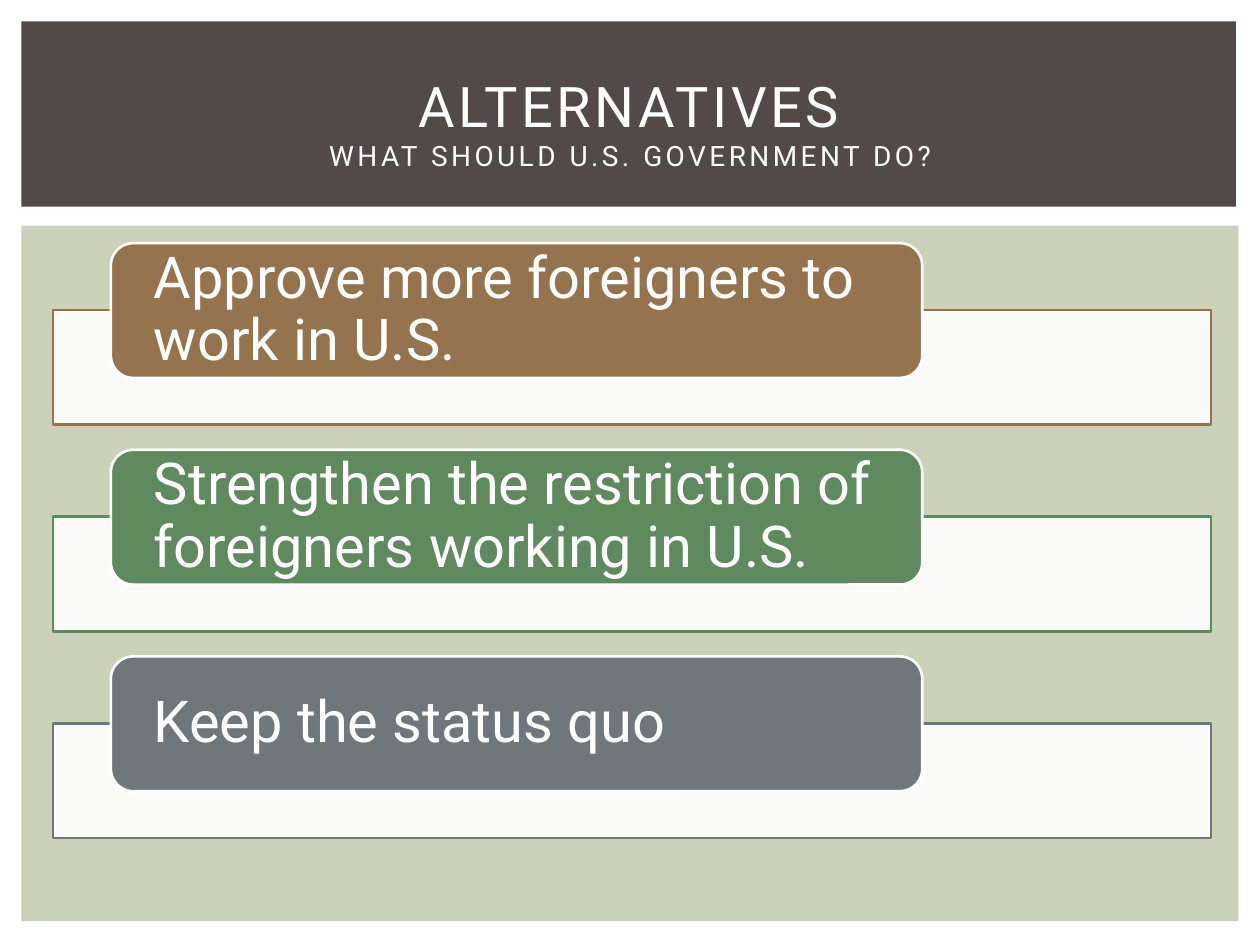
from dataclasses import dataclass

from lxml import etree
from pptx import Presentation
from pptx import util as u
from pptx.dml.color import RGBColor
from pptx.enum import shapes, text
from pptx.oxml.ns import qn


@dataclass(frozen=True)
class Theme:
    font: str = "Roboto"
    white: str = "FFFFFF"
    header: str = "534949"
    panel: str = "CCD1B9"
    accents: tuple = ("94734E", "5F895E", "6F777D")
    title_size: int = 32
    subtitle_size: int = 16
    option_size: int = 33
    title_spacing: int = 2
    line_width: float = 1.5


class SlideBuilder:
    def __init__(self, slide, theme):
        self.slide = slide
        self.theme = theme

    def add_box(self, kind, bounds, fill, line=None, opacity=100):
        """Draw a filled preset shape, outlined if a line colour is given."""
        box = self.slide.shapes.add_shape(kind, *map(u.Inches, bounds))
        box.shadow.inherit = False
        box.fill.solid()
        box.fill.fore_color.rgb = RGBColor.from_string(fill)
        if opacity < 100:
            color = box.element.spPr.find(qn("a:solidFill"))[0]
            etree.SubElement(color, qn("a:alpha"), val=str(opacity * 1000))
        if line:
            box.line.color.rgb = RGBColor.from_string(line)
            box.line.width = u.Pt(self.theme.line_width)
        else:
            box.line.fill.background()
        return box

    def add_span(self, para, words, size, spacing=0):
        span = para.add_run()
        span.text = words
        span.font.name = self.theme.font
        span.font.size = u.Pt(size)
        span.font.color.rgb = RGBColor.from_string(self.theme.white)
        if spacing:
            span.font._element.set("spc", str(spacing * 100))

    def add_title(self, heading, question):
        title = self.slide.shapes.title
        title.left, title.top = u.Inches(0.42), u.Inches(0.39)
        title.width, title.height = u.Inches(9.17), u.Inches(1.15)
        frame = title.text_frame
        frame.word_wrap = True
        frame.auto_size = text.MSO_AUTO_SIZE.NONE
        frame.vertical_anchor = text.MSO_ANCHOR.MIDDLE
        para = frame.paragraphs[0]
        para.alignment = text.PP_ALIGN.CENTER
        theme = self.theme
        self.add_span(para, heading, theme.title_size, theme.title_spacing)
        para.add_line_break()
        self.add_span(para, question, theme.subtitle_size, theme.title_spacing)
        # Bring the title in front of the header band
        title.element.getparent().append(title.element)

    def add_option(self, top, words, color):
        """Draw a label overlapping the outlined bar behind it."""
        self.add_box(shapes.MSO_SHAPE.RECTANGLE, (0.42, top + 0.53, 9.19, 0.91),
                     self.theme.white, color, opacity=90)
        label = self.add_box(shapes.MSO_SHAPE.ROUNDED_RECTANGLE,
                             (0.88, top, 6.44, 1.07), color, self.theme.white)
        frame = label.text_frame
        frame.word_wrap = True
        frame.vertical_anchor = text.MSO_ANCHOR.MIDDLE
        frame.margin_left = frame.margin_right = u.Inches(0.29)
        frame.margin_top = frame.margin_bottom = 0
        para = frame.paragraphs[0]
        para.alignment = text.PP_ALIGN.LEFT
        para.line_spacing = 0.9
        self.add_span(para, words, self.theme.option_size)


def main():
    deck = Presentation()
    deck.slide_width, deck.slide_height = u.Inches(10), u.Inches(7.5)
    theme = Theme()
    page = SlideBuilder(deck.slides.add_slide(deck.slide_layouts[5]), theme)

    # Background panel and header band
    page.add_box(shapes.MSO_SHAPE.RECTANGLE, (0.17, 1.79, 9.66, 5.52), theme.panel)
    page.add_box(shapes.MSO_SHAPE.RECTANGLE, (0.17, 0.17, 9.64, 1.47), theme.header)

    # Evenly spaced options
    options = (
        "Approve more foreigners to work in U.S.",
        "Strengthen the restriction of foreigners working in U.S.",
        "Keep the status quo",
    )
    for row, (words, color) in enumerate(zip(options, theme.accents)):
        page.add_option(1.93 + row * 1.64, words, color)

    # Title
    page.add_title("ALTERNATIVES", "WHAT SHOULD U.S. GOVERNMENT DO?")

    deck.save("out.pptx")


if __name__ == "__main__":
    main()
